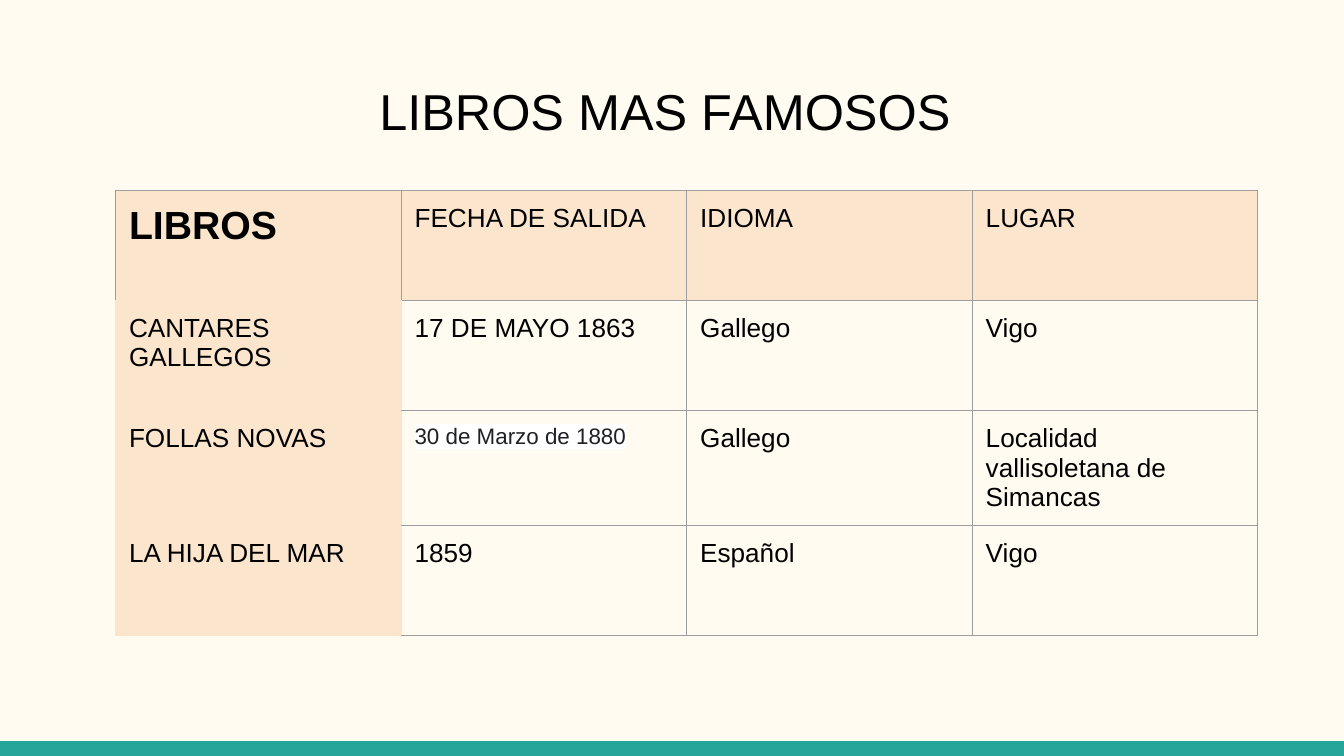
from dataclasses import dataclass

from lxml.etree import SubElement
from pptx import Presentation
from pptx.dml.color import RGBColor as Rgb
from pptx.enum.shapes import MSO_SHAPE as Shape
from pptx.enum.text import MSO_ANCHOR as Anchor, MSO_AUTO_SIZE as AutoSize, PP_ALIGN as Align
from pptx.oxml.ns import qn
from pptx.util import Emu, Pt

EMU_PER_PX = 4572  # 200 px to the inch


@dataclass(frozen=True)
class Theme:
    paper: str = "FFFBF0"
    accent: str = "26A69A"
    peach: str = "FCE5CD"
    grid: str = "9E9E9E"
    ink: str = "000000"
    soft_ink: str = "202124"
    highlight: str = "FFFFFF"
    font: str = "Arial"
    title_size: int = 27
    heading_size: int = 21
    body_size: int = 14
    small_size: int = 12
    border_width: float = 0.75


@dataclass(frozen=True)
class Entry:
    text: str
    size: int
    color: str
    bold: bool = False
    highlight: str | None = None


THEME = Theme()
SLIDE_WIDTH, SLIDE_HEIGHT = 2000, 1125
BAR_HEIGHT = 22
INSET = 20
COLUMN_WIDTH = 425
ROW_HEIGHTS = (164, 164, 166, 164)


def px(length: int) -> Emu:
    return Emu(length * EMU_PER_PX)


def body(text: str) -> Entry:
    return Entry(text, THEME.body_size, THEME.ink)


BOOKS = (
    (Entry("LIBROS", THEME.heading_size, THEME.ink, bold=True),
     body("FECHA DE SALIDA"), body("IDIOMA"), body("LUGAR")),
    (body("CANTARES GALLEGOS"), body("17 DE MAYO 1863"), body("Gallego"), body("Vigo")),
    (body("FOLLAS NOVAS"),
     Entry("30 de Marzo de 1880", THEME.small_size, THEME.soft_ink, highlight=THEME.highlight),
     body("Gallego"), body("Localidad vallisoletana de Simancas")),
    (body("LA HIJA DEL MAR"), body("1859"), body("Español"), body("Vigo")),
)


def write_text(frame, text: str, *, size: int, color: str, bold: bool = False,
               highlight: str | None = None, align=Align.LEFT) -> None:
    paragraph = frame.paragraphs[0]
    paragraph.alignment = align
    run = paragraph.add_run()
    run.text = text
    font = run.font
    font.name, font.size, font.bold = THEME.font, Pt(size), bold
    font.color.rgb = Rgb.from_string(color)
    if highlight:
        properties = run._r.get_or_add_rPr()
        mark = SubElement(properties, qn("a:highlight"))
        SubElement(mark, qn("a:srgbClr"), val=highlight)
        properties.find(qn("a:solidFill")).addnext(mark)


def set_insets(holder) -> None:
    holder.margin_left = holder.margin_right = px(INSET)
    holder.margin_top = holder.margin_bottom = px(INSET)


def border_colors(row: int, column: int) -> dict[str, str]:
    """Book names blend into their column; everything else has a grey grid."""
    colors = dict.fromkeys("LRTB", THEME.grid)
    if column == 0 and row == 0:
        colors["B"] = THEME.peach
    elif column == 0:
        colors = dict.fromkeys("LRTB", THEME.peach)
    elif column == 1 and row > 0:
        colors["L"] = THEME.peach
    return colors


def set_borders(cell, colors: dict[str, str]) -> None:
    properties = cell._tc.get_or_add_tcPr()
    for position, (side, color) in enumerate(colors.items()):
        line = SubElement(properties, qn(f"a:ln{side}"), w=str(Pt(THEME.border_width)))
        SubElement(SubElement(line, qn("a:solidFill")), qn("a:srgbClr"), val=color)
        properties.insert(position, line)


def fill_cell(cell, entry: Entry, row: int, column: int) -> None:
    set_insets(cell)
    if row == 0 or column == 0:
        cell.fill.solid()
        cell.fill.fore_color.rgb = Rgb.from_string(THEME.peach)
    else:
        cell.fill.background()
    set_borders(cell, border_colors(row, column))
    write_text(cell.text_frame, entry.text, size=entry.size, color=entry.color,
               bold=entry.bold, highlight=entry.highlight)


def add_book_table(slide, left: int, top: int) -> None:
    columns = len(BOOKS[0])
    books = slide.shapes.add_table(
        len(BOOKS), columns, px(left), px(top),
        px(COLUMN_WIDTH * columns), px(sum(ROW_HEIGHTS))).table
    books.first_row = books.horz_banding = False
    for column in books.columns:
        column.width = px(COLUMN_WIDTH)
    for row, (height, entries) in enumerate(zip(ROW_HEIGHTS, BOOKS)):
        books.rows[row].height = px(height)
        for column, entry in enumerate(entries):
            fill_cell(books.cell(row, column), entry, row, column)


def add_title(slide, text: str) -> None:
    title = slide.shapes.title
    title.left, title.top, title.width, title.height = map(px, (68, 97, 1864, 134))
    frame = title.text_frame
    frame.auto_size = AutoSize.NONE
    frame.word_wrap = True
    frame.vertical_anchor = Anchor.MIDDLE
    set_insets(frame)
    write_text(frame, text, size=THEME.title_size, color=THEME.ink, align=Align.CENTER)


def add_bottom_bar(slide) -> None:
    bar = slide.shapes.add_shape(Shape.RECTANGLE, px(0), px(SLIDE_HEIGHT - BAR_HEIGHT),
                                 px(SLIDE_WIDTH), px(BAR_HEIGHT))
    bar.shadow.inherit = False
    bar.fill.solid()
    bar.fill.fore_color.rgb = Rgb.from_string(THEME.accent)
    bar.line.fill.background()


def main() -> None:
    deck = Presentation()
    deck.slide_width, deck.slide_height = px(SLIDE_WIDTH), px(SLIDE_HEIGHT)
    slide = deck.slides.add_slide(deck.slide_layouts[5])

    # Background and bottom bar
    slide.background.fill.solid()
    slide.background.fill.fore_color.rgb = Rgb.from_string(THEME.paper)
    add_bottom_bar(slide)

    # Title and table of books
    add_title(slide, "LIBROS MAS FAMOSOS ")
    add_book_table(slide, left=172, top=283)

    deck.save("out.pptx")


if __name__ == "__main__":
    main()
